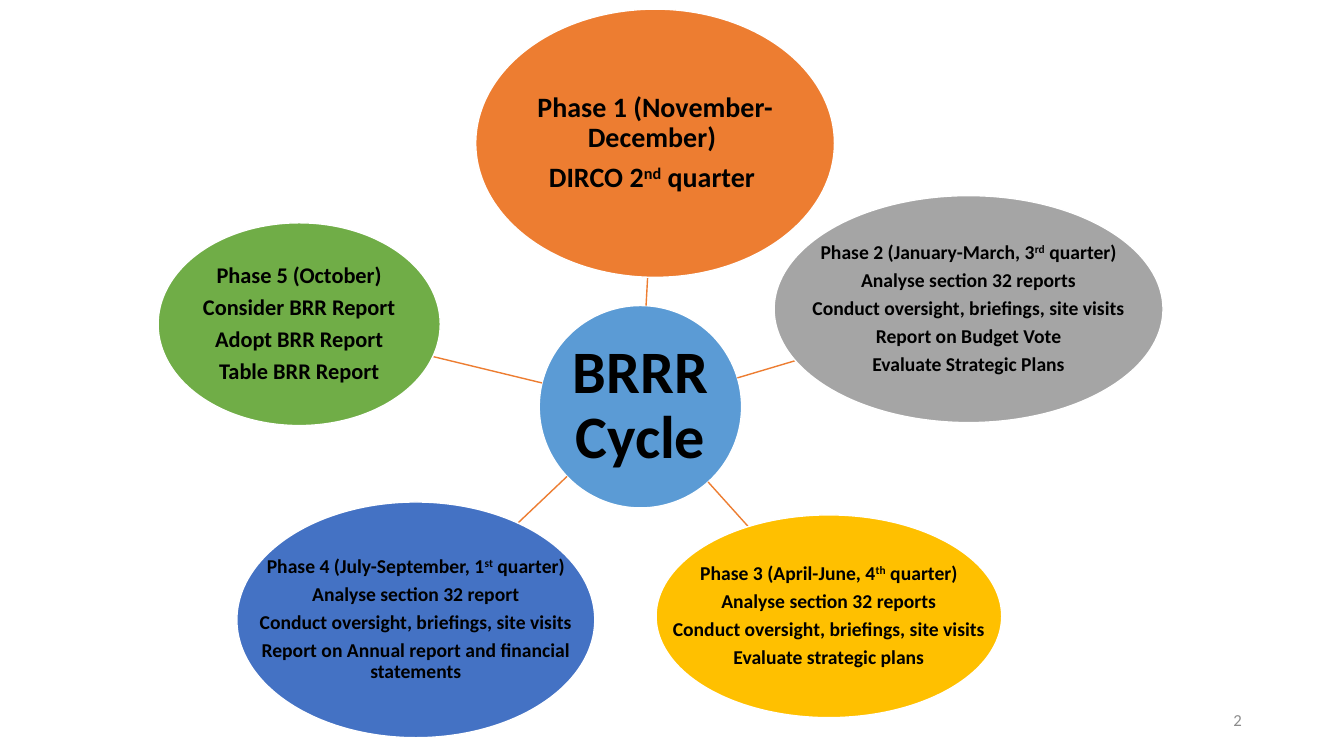
from math import hypot

from lxml import etree
from pptx import Presentation
from pptx.dml.color import RGBColor
from pptx.enum.shapes import MSO_CONNECTOR, MSO_SHAPE
from pptx.enum.text import MSO_ANCHOR, PP_ALIGN
from pptx.oxml.ns import qn
from pptx.util import Cm, Pt

COLORS = {
    "text": "000000", "number": "8C8C8C", "outline": "FFFFFF",
    "spoke": "ED7D31", "hub": "5B9BD5", "phase 1": "ED7D31",
    "phase 2": "A5A5A5", "phase 3": "FFC000", "phase 4": "4472C4",
    "phase 5": "70AD47",
}
HUB = (16.14, 10.25, 5.1, 5.1)
PHASES = [
    ("phase 1", (16.51, 3.61, 9.04, 6.76), 20, [
        "Phase 1 (November-December) ",
        "DIRCO 2^nd^ quarter "]),
    ("phase 2", (24.41, 7.79, 9.8, 5.72), 14, [
        "Phase 2 (January-March, 3^rd^ quarter)",
        "Analyse section 32 reports",
        "Conduct oversight, briefings, site visits",
        "Report on Budget Vote",
        "Evaluate Strategic Plans"]),
    ("phase 3", (20.89, 15.53, 8.71, 5.11), 14, [
        "Phase 3 (April-June, 4^th^ quarter)",
        "Analyse section 32 reports",
        "Conduct oversight, briefings, site visits",
        "Evaluate strategic plans"]),
    ("phase 4", (10.48, 15.62, 9.02, 5.94), 14, [
        "Phase 4 (July-September, 1^st^ quarter)",
        "Analyse section 32 report",
        "Conduct oversight, briefings, site visits",
        "Report on Annual report and financial statements"]),
    ("phase 5", (7.54, 8.17, 7.11, 5.11), 16, [
        "Phase 5 (October)",
        "Consider BRR Report",
        "Adopt BRR Report",
        "Table BRR Report"]),
]


def edge_point(oval, toward):
    """Return where the line from the oval's centre to another meets its edge."""
    x, y, width, height = oval
    dx, dy = toward[0] - x, toward[1] - y
    scale = 1 / hypot(dx / (width / 2), dy / (height / 2))
    return Cm(x + dx * scale), Cm(y + dy * scale)


class CycleSlide:
    """Draws the elements of a hub-and-spoke cycle on one slide."""

    font_name = "Calibri"

    def __init__(self, slide):
        self.slide = slide

    def color(self, name):
        return RGBColor.from_string(COLORS[name])

    def text(self, box, lines, size, color="text", bold=True,
             align=PP_ALIGN.CENTER, inset=0.03):
        """Add a text box given by centre and size; ^ marks superscripts."""
        x, y, width, height = box
        shape = self.slide.shapes.add_textbox(
            Cm(x - width / 2), Cm(y - height / 2), Cm(width), Cm(height))
        frame = shape.text_frame
        frame.word_wrap = True
        frame.vertical_anchor = MSO_ANCHOR.MIDDLE
        frame.margin_left = frame.margin_right = Cm(inset)
        frame.margin_top = frame.margin_bottom = Cm(inset)
        for index, line in enumerate(lines):
            paragraph = frame.add_paragraph() if index else frame.paragraphs[0]
            paragraph.alignment = align
            paragraph.line_spacing = 0.9
            paragraph.space_after = Pt(size * 0.35)
            paragraph.font.name = self.font_name
            paragraph.font.size = Pt(size)
            paragraph.font.bold = bold
            paragraph.font.color.rgb = self.color(color)
            for position, part in enumerate(line.split("^")):
                run = paragraph.add_run()
                run.text = part
                if position % 2:
                    run._r.get_or_add_rPr().set("baseline", "30000")

    def oval(self, box, fill, lines, size):
        """Add a filled ellipse with its text on top."""
        x, y, width, height = box
        shape = self.slide.shapes.add_shape(
            MSO_SHAPE.OVAL, Cm(x - width / 2), Cm(y - height / 2),
            Cm(width), Cm(height))
        shape.shadow.inherit = False
        shape.fill.solid()
        shape.fill.fore_color.rgb = self.color(fill)
        shape.line.color.rgb = self.color("outline")
        shape.line.width = Pt(1)
        self.text(box, lines, size)

    def spoke(self, start, end):
        """Connect the facing edges of two ellipses."""
        connector = self.slide.shapes.add_connector(
            MSO_CONNECTOR.STRAIGHT, *edge_point(start, end),
            *edge_point(end, start))
        connector.line.color.rgb = self.color("spoke")
        connector.line.width = Pt(1)
        etree.SubElement(connector._element.spPr, qn("a:effectLst"))


def main():
    presentation = Presentation()
    presentation.slide_width = Cm(33.87)
    presentation.slide_height = Cm(19.05)
    cycle = CycleSlide(presentation.slides.add_slide(presentation.slide_layouts[6]))
    cycle.oval(HUB, "hub", ["BRRR Cycle"], 43)
    for name, box, size, lines in PHASES:
        cycle.spoke(HUB, box)
        cycle.oval(box, name, lines, size)
    cycle.text((27.74, 18.16, 7.62, 1.02), ["2"], 12, "number", False,
               PP_ALIGN.RIGHT, 0.25)
    presentation.save("out.pptx")


if __name__ == "__main__":
    main()
